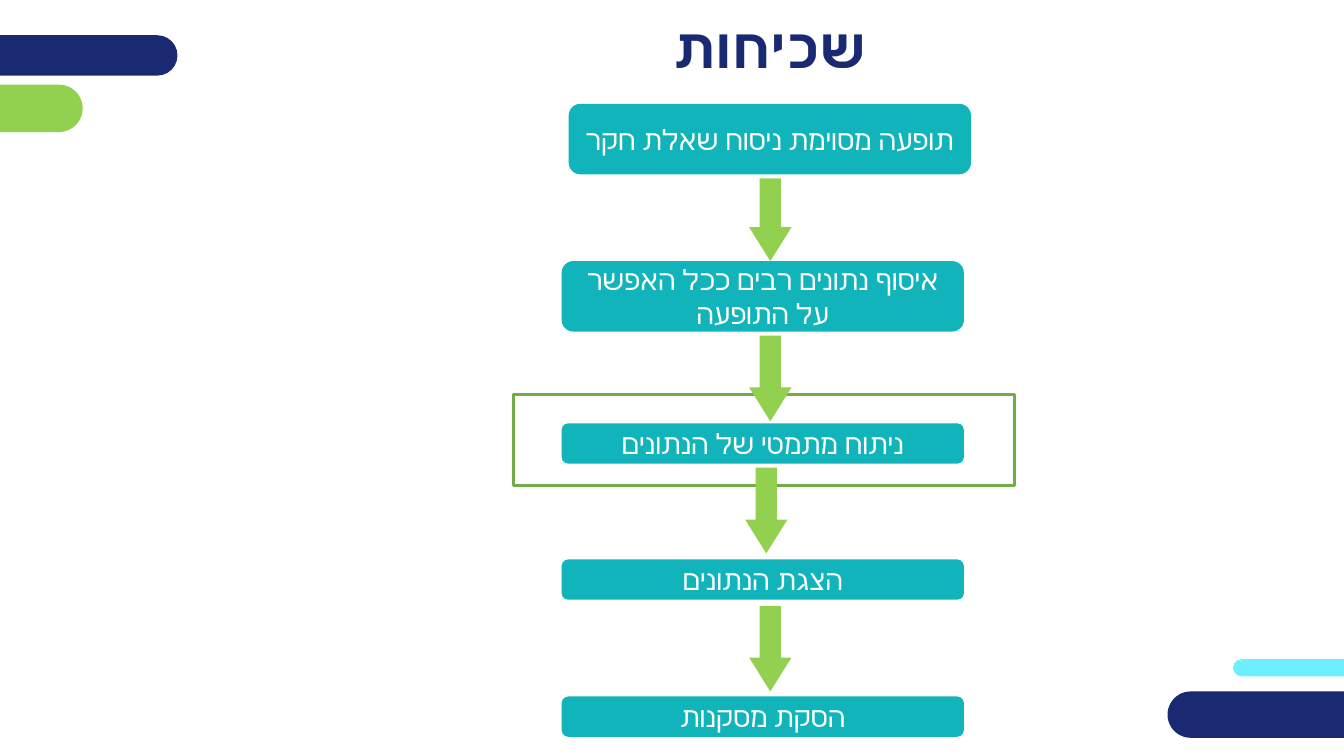
from dataclasses import dataclass

from pptx import Presentation
from pptx.dml.color import RGBColor
from pptx.enum.shapes import MSO_SHAPE
from pptx.enum.text import MSO_ANCHOR, PP_ALIGN
from pptx.util import Inches, Pt


@dataclass(frozen=True)
class Theme:
    navy: RGBColor = RGBColor.from_string("192A72")
    green: RGBColor = RGBColor.from_string("92D050")
    cyan: RGBColor = RGBColor.from_string("6CF0FF")
    teal: RGBColor = RGBColor.from_string("12B4BC")
    frame: RGBColor = RGBColor.from_string("70AD47")
    white: RGBColor = RGBColor.from_string("FFFFFF")
    font: str = "Arial"
    title_size: Pt = Pt(40)
    step_size: Pt = Pt(20)


theme = Theme()
deck = Presentation()
deck.slide_width, deck.slide_height = Inches(13.33), Inches(7.5)
page = deck.slides.add_slide(deck.slide_layouts[6])


def add_filled(preset, left, top, width, height, color):
    shape = page.shapes.add_shape(
        preset, Inches(left), Inches(top), Inches(width), Inches(height)
    )
    shape.shadow.inherit = False
    shape.fill.solid()
    shape.fill.fore_color.rgb = color
    shape.line.fill.background()
    return shape


def write_hebrew(box, text, size, color, bold=False, side_inset=0.1):
    """Fill the box with one centred right-to-left paragraph."""
    frame = box.text_frame
    frame.word_wrap = True
    frame.vertical_anchor = MSO_ANCHOR.MIDDLE
    frame.margin_left = frame.margin_right = Inches(side_inset)
    para = frame.paragraphs[0]
    para.text = text
    para.alignment = PP_ALIGN.CENTER
    para._p.get_or_add_pPr().set("rtl", "1")
    para.font.size = size
    para.font.bold = bold
    para.font.color.rgb = color
    para.font.name = theme.font


# Rounded bars running in from the slide edges
for left, top, width, height, color in [
    (12.23, 6.54, 1.74, 0.17, theme.cyan),
    (-0.45, 0.84, 1.27, 0.47, theme.green),
    (-0.53, 0.35, 2.29, 0.4, theme.navy),
    (11.58, 6.86, 2.4, 0.46, theme.navy),
]:
    bar = add_filled(MSO_SHAPE.ROUNDED_RECTANGLE, left, top, width, height, color)
    bar.adjustments[0] = 0.5

# Frame around the mathematical analysis step
highlight = add_filled(MSO_SHAPE.RECTANGLE, 5.09, 3.91, 4.97, 0.91, theme.white)
highlight.line.color.rgb = theme.frame
highlight.line.width = Pt(2)

title = page.shapes.add_textbox(Inches(2.03), Inches(0.11), Inches(11.21), Inches(0.7))
write_hebrew(title, "שכיחות", theme.title_size, theme.navy, bold=True)

# Steps of the inquiry, from top to bottom; the first needs a wider line
for left, top, height, side_inset, text in [
    (5.64, 1.03, 0.7, 0.05, "תופעה מסוימת ניסוח שאלת חקר"),
    (5.57, 2.59, 0.7, 0.1, "איסוף נתונים רבים ככל האפשר על התופעה"),
    (5.57, 4.2, 0.4, 0.1, "ניתוח מתמטי של הנתונים"),
    (5.57, 5.55, 0.4, 0.1, "הצגת הנתונים"),
    (5.57, 6.91, 0.4, 0.1, "הסקת מסקנות"),
]:
    step = add_filled(
        MSO_SHAPE.FLOWCHART_ALTERNATE_PROCESS, left, top, 3.99, height, theme.teal
    )
    write_hebrew(step, text, theme.step_size, theme.white, side_inset=side_inset)

for left, top, height in [
    (7.43, 1.77, 0.82),
    (7.43, 3.33, 0.85),
    (7.39, 4.64, 0.85),
    (7.43, 6.01, 0.85),
]:
    arrow = add_filled(MSO_SHAPE.DOWN_ARROW, left, top, 0.42, height, theme.green)
    arrow.adjustments[0] = 0.5
    arrow.adjustments[1] = 0.8

deck.save("out.pptx")
